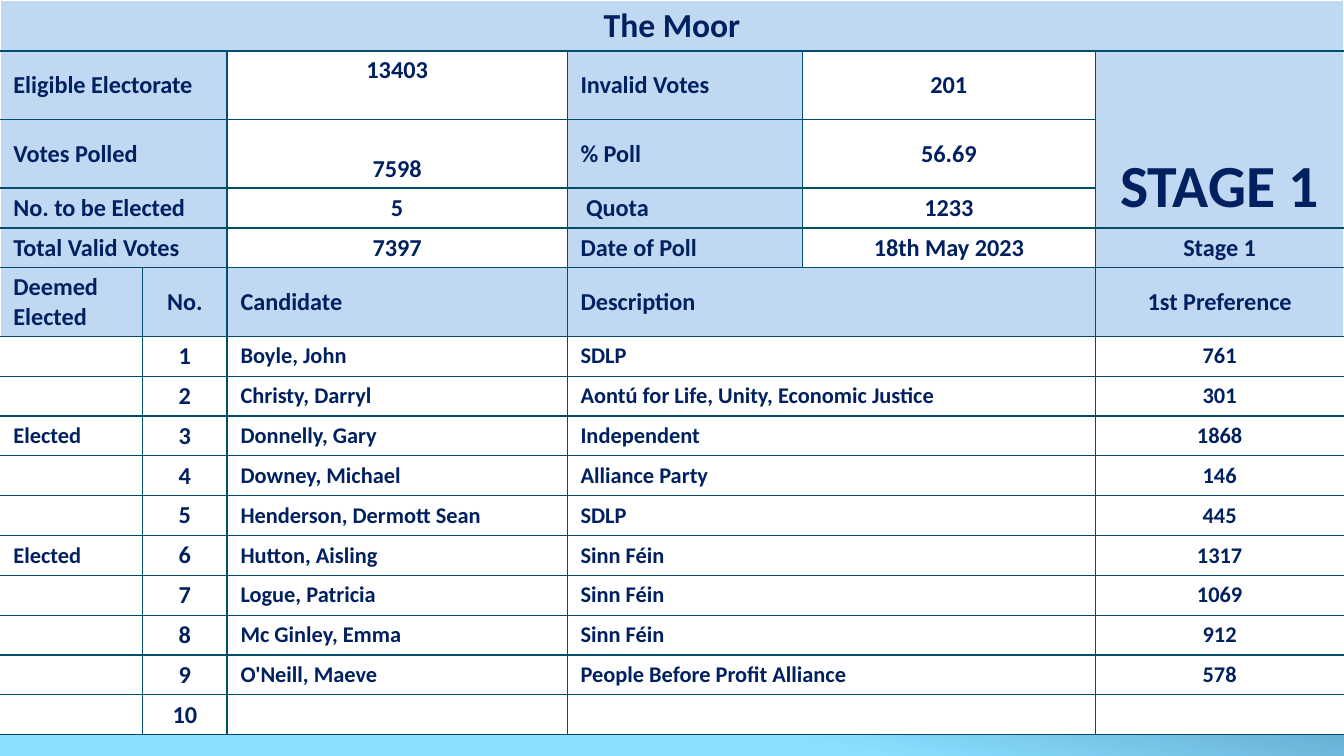
from lxml.etree import SubElement
from pptx import Presentation
from pptx.dml.color import RGBColor
from pptx.enum.text import MSO_ANCHOR as Anchor, PP_ALIGN as Align
from pptx.oxml.ns import qn
from pptx.util import Inches, Pt

NAVY, TEAL, PALE, WHITE = "002060", "004E6C", "C1D8F2", "FFFFFF"
COLUMN_WIDTHS = [1.06, 0.63, 2.53, 1.75, 2.18, 1.85]
TITLE_HEIGHT, TALL_HEIGHT, TABLE_HEIGHT = 0.38, 0.51, 5.47
TITLE_ROW, HEADER_ROW = 0, 5
TALL_ROWS = {1, 2, HEADER_ROW}
RESULTS = [
    ["The Moor", "", "", "", "", ""],
    ["Eligible Electorate", "", "13403", "Invalid Votes", "201", "STAGE 1"],
    ["Votes Polled", "", "7598", "% Poll", "56.69", ""],
    ["No. to be Elected", "", "5", " Quota", "1233", ""],
    ["Total Valid Votes", "", "7397", "Date of Poll", "18th May 2023", "Stage 1"],
    ["Deemed Elected", "No.", "Candidate", "Description", "", "1st Preference"],
    ["", "1", "Boyle, John", "SDLP", "", "761"],
    ["", "2", "Christy, Darryl", "Aontú for Life, Unity, Economic Justice", "", "301"],
    ["Elected", "3", "Donnelly, Gary", "Independent", "", "1868"],
    ["", "4", "Downey, Michael", "Alliance Party", "", "146"],
    ["", "5", "Henderson, Dermott Sean", "SDLP", "", "445"],
    ["Elected", "6", "Hutton, Aisling", "Sinn Féin", "", "1317"],
    ["", "7", "Logue, Patricia", "Sinn Féin", "", "1069"],
    ["", "8", "Mc Ginley, Emma", "Sinn Féin", "", "912"],
    ["", "9", "O'Neill, Maeve", "People Before Profit Alliance", "", "578"],
    ["", "10", "", "", "", ""],
]
LAST_COLUMN = len(COLUMN_WIDTHS) - 1
ANCHORS = {(1, 2): Anchor.TOP, (2, 2): Anchor.BOTTOM, (1, LAST_COLUMN): Anchor.BOTTOM}


def rgb(value):
    """Turn a hex string into a colour."""
    return RGBColor.from_string(value)


def paint_background(slide):
    """Fill the slide with the blue gradient."""
    fill = slide.background.fill
    fill.gradient()
    fill.gradient_angle = 360 - 102
    for stop, (position, color) in zip(fill.gradient_stops, [(0.42, "0D3868"), (0.82, "8ADFFF")]):
        stop.position = position
        stop.color.rgb = rgb(color)


def set_borders(cell, row, column):
    """Rule a cell in teal, with white on the outer sides and top."""
    span = cell.span_width if cell.is_merge_origin else 1
    white_sides = {"L": column == 0, "R": column + span > LAST_COLUMN, "T": row == TITLE_ROW, "B": False}
    properties = cell._tc.get_or_add_tcPr()
    for side, is_white in white_sides.items():
        line = SubElement(properties, qn(f"a:ln{side}"), w=str(Pt(1 if is_white else 0.75)))
        solid = SubElement(line, qn("a:solidFill"))
        SubElement(solid, qn("a:srgbClr"), val=WHITE if is_white else TEAL)


def text_size(row, column):
    """Choose the point size for a place in the table."""
    if row == TITLE_ROW:
        return 18
    if (row, column) == (1, LAST_COLUMN):
        return 32
    return 12 if row > HEADER_ROW and column != 1 else 13


def write_cell(cell, text, row, column):
    """Write, align and colour one cell."""
    in_summary = TITLE_ROW < row < HEADER_ROW
    centred = row == TITLE_ROW or column in (1, LAST_COLUMN) or (in_summary and column in (2, 4))
    shaded = row in (TITLE_ROW, HEADER_ROW) or (in_summary and column not in (2, 4))
    set_borders(cell, row, column)
    cell.fill.solid()
    cell.fill.fore_color.rgb = rgb(PALE if shaded else WHITE)
    cell.margin_left = cell.margin_right = Inches(0.1)
    cell.margin_top = cell.margin_bottom = Inches(0.03)
    cell.vertical_anchor = ANCHORS.get((row, column), Anchor.MIDDLE)
    cell.text_frame.text = text
    paragraph = cell.text_frame.paragraphs[0]
    paragraph.alignment = Align.CENTER if centred else Align.LEFT
    size = Pt(text_size(row, column))
    for run in paragraph.runs:
        run.font.name, run.font.size, run.font.bold = "Calibri", size, True
        run.font.color.rgb = rgb(NAVY)
    if not text:
        paragraph._p.get_or_add_endParaRPr().set("sz", str(int(size.pt * 100)))


def merge_cells(table):
    """Join the title, stage, summary label and description cells."""
    table.cell(TITLE_ROW, 0).merge(table.cell(TITLE_ROW, LAST_COLUMN))
    table.cell(1, LAST_COLUMN).merge(table.cell(3, LAST_COLUMN))
    for row in range(1, HEADER_ROW):
        table.cell(row, 0).merge(table.cell(row, 1))
    for row in range(HEADER_ROW, len(RESULTS)):
        table.cell(row, 3).merge(table.cell(row, 4))


def add_results(slide):
    """Add the table of the first count."""
    table = slide.shapes.add_table(
        len(RESULTS), len(COLUMN_WIDTHS), 0, 0, Inches(sum(COLUMN_WIDTHS)), Inches(TABLE_HEIGHT)
    ).table
    table.first_row = table.horz_banding = False
    for column, width in zip(table.columns, COLUMN_WIDTHS):
        column.width = Inches(width)
    plain_rows = len(RESULTS) - 1 - len(TALL_ROWS)
    plain_height = (TABLE_HEIGHT - TITLE_HEIGHT - len(TALL_ROWS) * TALL_HEIGHT) / plain_rows
    merge_cells(table)
    for row, texts in enumerate(RESULTS):
        height = TITLE_HEIGHT if row == TITLE_ROW else TALL_HEIGHT if row in TALL_ROWS else plain_height
        table.rows[row].height = Inches(height)
        for column, text in enumerate(texts):
            write_cell(table.cell(row, column), text, row, column)


def main():
    """Build and save the slide."""
    presentation = Presentation()
    presentation.slide_width = Inches(10)
    presentation.slide_height = Inches(10 * 9 / 16)
    slide = presentation.slides.add_slide(presentation.slide_layouts[6])
    paint_background(slide)
    add_results(slide)
    presentation.save("out.pptx")


if __name__ == "__main__":
    main()
